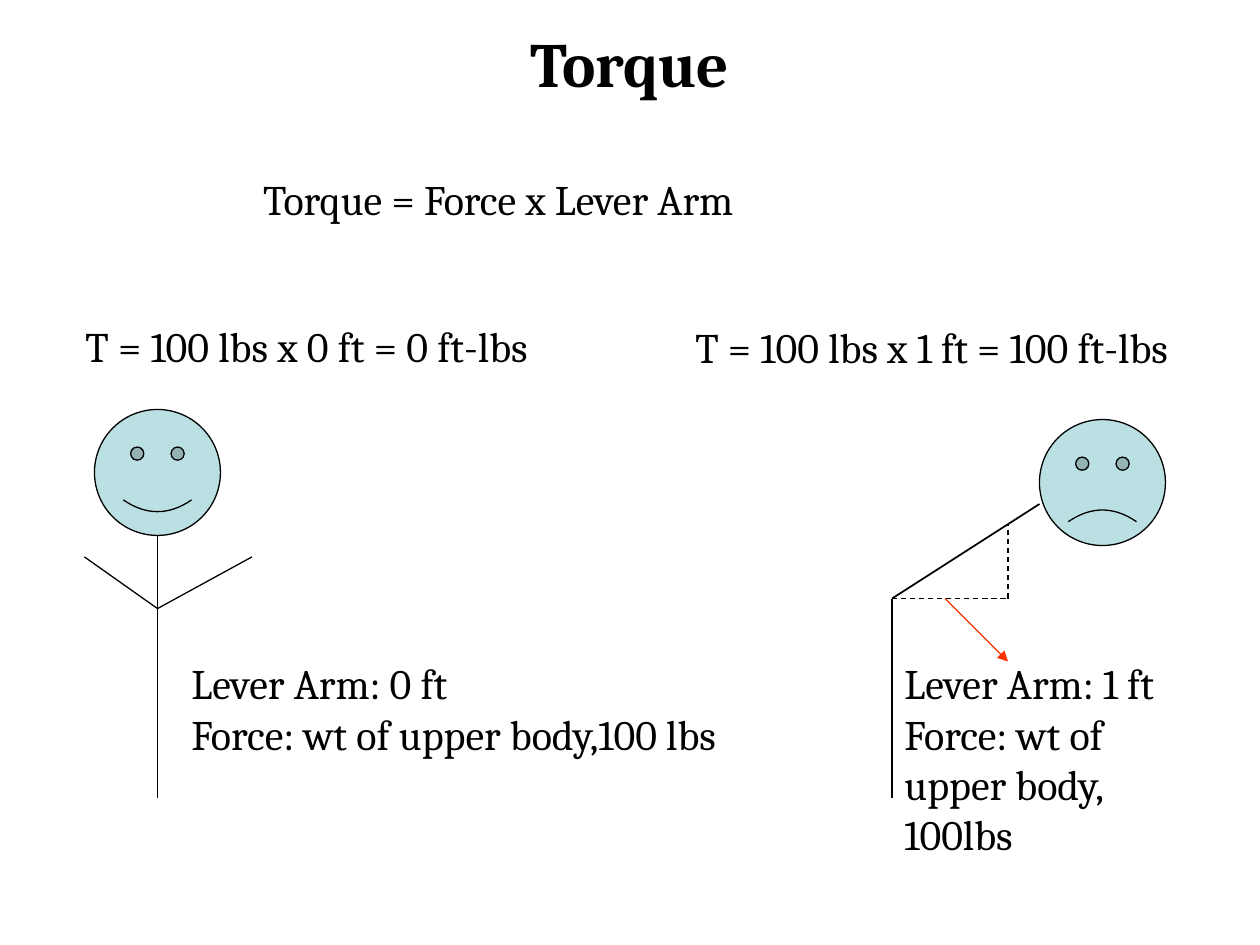
import pptx
import pptx.util
import pptx.dml.color
import pptx.enum.dml
import pptx.enum.shapes
import pptx.enum.text
import pptx.oxml
import pptx.oxml.ns

Inches = pptx.util.Inches
COLORS = {"ink": "000000", "skin": "BBE0E3", "pointer": "FF3300"}


class TorqueSlide:
    """Holds the style and the current slide, and draws each kind of element."""

    font = "Cambria"

    def __init__(self, slide):
        self.slide = slide

    def color(self, name):
        return pptx.dml.color.RGBColor.from_string(COLORS[name])

    def text(self, left, top, width, height, lines, size=24, bold=False, align="LEFT"):
        frame = self.slide.shapes.add_textbox(
            Inches(left), Inches(top), Inches(width), Inches(height)).text_frame
        frame.word_wrap = True
        frame.vertical_anchor = pptx.enum.text.MSO_ANCHOR.MIDDLE
        for index, line in enumerate(lines):
            paragraph = frame.add_paragraph() if index else frame.paragraphs[0]
            paragraph.alignment = getattr(pptx.enum.text.PP_ALIGN, align)
            run = paragraph.add_run()
            run.text = line
            run.font.name = self.font
            run.font.size = pptx.util.Pt(size)
            run.font.bold = bold
            run.font.color.rgb = self.color("ink")

    def face(self, left, top, smile):
        head = self.slide.shapes.add_shape(
            pptx.enum.shapes.MSO_SHAPE.SMILEY_FACE,
            Inches(left), Inches(top), Inches(1), Inches(1))
        head.adjustments[0] = smile
        head.shadow.inherit = False
        head.fill.solid()
        head.fill.fore_color.rgb = self.color("skin")
        head.line.color.rgb = self.color("ink")
        head.line.width = pptx.util.Pt(0.75)

    def line(self, start, end, color="ink", width=0.75, dashed=False, arrow=False):
        stroke = self.slide.shapes.add_connector(
            pptx.enum.shapes.MSO_CONNECTOR.STRAIGHT,
            *(Inches(value) for value in (*start, *end)))
        stroke.line.color.rgb = self.color(color)
        stroke.line.width = pptx.util.Pt(width)
        if dashed:
            stroke.line.dash_style = pptx.enum.dml.MSO_LINE.DASH
        if arrow:
            tail = pptx.oxml.parse_xml(
                f'<a:tailEnd {pptx.oxml.ns.nsdecls("a")} type="triangle"/>')
            stroke.line._get_or_add_ln().append(tail)
        stroke._element.spPr.append(pptx.oxml.parse_xml(
            f'<a:effectLst {pptx.oxml.ns.nsdecls("a")}/>'))


def main():
    deck = pptx.Presentation()
    deck.slide_width, deck.slide_height = Inches(10), Inches(7.5)
    page = TorqueSlide(deck.slides.add_slide(deck.slide_layouts[6]))

    page.text(0.75, 0.08, 8.5, 0.83, ["Torque"], size=36, bold=True, align="CENTER")
    page.text(1.99, 1.33, 5.2, 0.5, ["Torque = Force x Lever Arm"])
    page.text(0.58, 2.49, 4.17, 0.5, ["T = 100 lbs x 0 ft = 0 ft-lbs"])
    page.text(5.42, 2.5, 4.58, 0.5, ["T = 100 lbs x 1 ft = 100 ft-lbs"])

    shoulder = (1.25, 4.83)
    page.face(0.75, 3.25, 0.047)
    page.line((1.25, 4.25), (1.25, 6.33))
    for hand in ((0.67, 4.42), (2, 4.42)):
        page.line(shoulder, hand)
    page.text(1.42, 5.17, 5.17, 0.9, ["Lever Arm: 0 ft", "Force: wt of upper body,100 lbs"])

    hip, lever_end = (7.08, 4.75), (8, 4.75)
    page.face(8.25, 3.33, -0.047)
    page.line((8.25, 4), hip, width=1)
    page.line(hip, (7.08, 6.33), width=1)
    page.line(lever_end, (8, 4.17), dashed=True)
    page.line(hip, lever_end, dashed=True)
    page.line((7.5, 4.75), (8, 5.25), color="pointer", arrow=True)
    page.text(7.08, 5.17, 2.5, 1.7, ["Lever Arm: 1 ft", "Force: wt of upper body, 100lbs"])

    deck.save("out.pptx")


if __name__ == "__main__":
    main()
